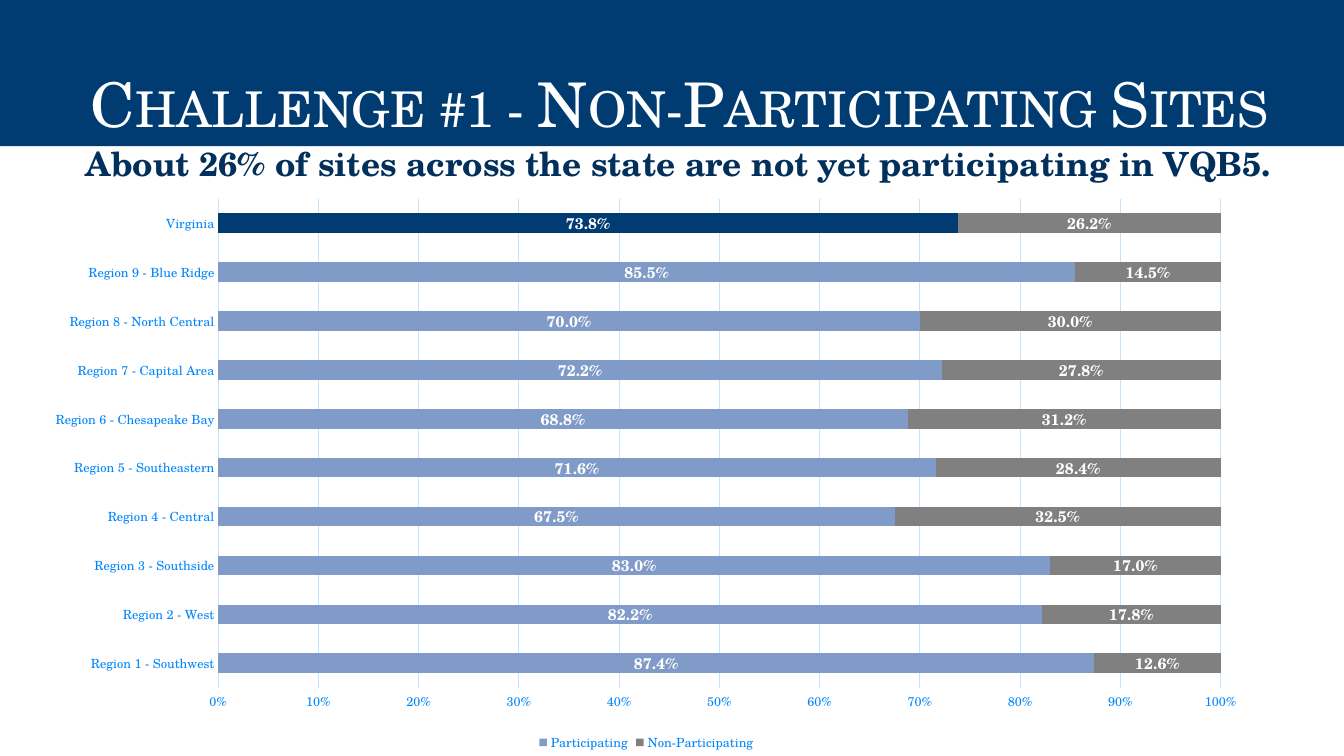
from pptx import Presentation
from pptx.chart.data import CategoryChartData
from pptx.dml.color import RGBColor
from pptx.enum.chart import XL_CHART_TYPE, XL_LABEL_POSITION, XL_LEGEND_POSITION, XL_TICK_MARK
from pptx.enum.shapes import MSO_SHAPE
from pptx.enum.text import MSO_ANCHOR, PP_ALIGN
from pptx.oxml import parse_xml
from pptx.oxml.ns import nsdecls, qn
from pptx.util import Emu, Pt

PX = 9144  # 100 px to the inch
FONT = "TeX Gyre Schola"
WHITE = RGBColor(0xFF, 0xFF, 0xFF)
NAVY = RGBColor(0x00, 0x3C, 0x71)
DARK_NAVY = RGBColor(0x00, 0x30, 0x5B)
BRIGHT_BLUE = RGBColor(0x00, 0x86, 0xFC)
PALE_BLUE = RGBColor(0xC3, 0xE3, 0xFF)
SOFT_BLUE = RGBColor(0x81, 0x9B, 0xC9)
GRAY = RGBColor(0x80, 0x80, 0x80)

PARTICIPATION = {
    "Region 1 - Southwest": (0.874, 0.126),
    "Region 2 - West": (0.822, 0.178),
    "Region 3 - Southside": (0.83, 0.17),
    "Region 4 - Central": (0.675, 0.325),
    "Region 5 - Southeastern": (0.716, 0.284),
    "Region 6 - Chesapeake Bay": (0.688, 0.312),
    "Region 7 - Capital Area": (0.722, 0.278),
    "Region 8 - North Central": (0.7, 0.3),
    "Region 9 - Blue Ridge": (0.855, 0.145),
    "Virginia": (0.738, 0.262),
}
SERIES_COLORS = {"Participating": SOFT_BLUE, "Non-Participating": GRAY}


def px(*lengths):
    return [Emu(length * PX) for length in lengths]


def style_font(font, size, color, bold=False):
    font.name = FONT
    font.size = Pt(size)
    font.bold = bold
    font.color.rgb = color


def write_line(shape, text, size, color, left_inset, line_spacing, bold=False):
    """Put one left-aligned line of text in a shape and return its run."""
    frame = shape.text_frame
    frame.word_wrap = True
    frame.margin_left, frame.margin_right = px(left_inset, 10)
    frame.margin_top, frame.margin_bottom = px(5, 5)
    paragraph = frame.paragraphs[0]
    paragraph.alignment = PP_ALIGN.LEFT
    paragraph.line_spacing = line_spacing
    run = paragraph.add_run()
    run.text = text
    style_font(run.font, size, color, bold)
    return run


def add_title_band(slide, text):
    band = slide.shapes.add_shape(MSO_SHAPE.RECTANGLE, *px(0, 0, 1333, 145))
    band.shadow.inherit = False
    band.fill.solid()
    band.fill.fore_color.rgb = NAVY
    band.line.fill.background()
    band.text_frame.vertical_anchor = MSO_ANCHOR.BOTTOM
    run = write_line(band, text, 44, WHITE, left_inset=90, line_spacing=0.9)
    run.font._element.set("cap", "small")


def add_subtitle(slide, text):
    box = slide.shapes.add_textbox(*px(55, 145, 1260, 65))
    write_line(box, text, 23.8, DARK_NAVY, left_inset=30, line_spacing=0.8, bold=True)


def place_plot(chart, left, top, width, height):
    """Fix the inner plot area, in fractions of the chart."""
    plot_area = chart.element.find(".//" + qn("c:plotArea"))
    for layout in plot_area.findall(qn("c:layout")):
        plot_area.remove(layout)
    plot_area.insert(0, parse_xml(
        f'<c:layout {nsdecls("c")}><c:manualLayout><c:layoutTarget val="inner"/>'
        '<c:xMode val="edge"/><c:yMode val="edge"/>'
        f'<c:x val="{left}"/><c:y val="{top}"/><c:w val="{width}"/><c:h val="{height}"/>'
        '</c:manualLayout></c:layout>'))


def style_axes(chart):
    category_axis, value_axis = chart.category_axis, chart.value_axis
    for axis in (category_axis, value_axis):
        axis.major_tick_mark = axis.minor_tick_mark = XL_TICK_MARK.NONE
        style_font(axis.tick_labels.font, 9, BRIGHT_BLUE)
    category_axis.has_major_gridlines = False
    value_axis.has_major_gridlines = True
    for line in (category_axis.format.line, value_axis.major_gridlines.format.line):
        line.color.rgb = PALE_BLUE
        line.width = Pt(0.75)
    value_axis.format.line.fill.background()
    value_axis.minimum_scale, value_axis.maximum_scale = 0, 1
    value_axis.major_unit = 0.1
    value_axis.tick_labels.number_format = "0%"
    value_axis.tick_labels.number_format_is_linked = False


def style_series(series, color):
    series.format.fill.solid()
    series.format.fill.fore_color.rgb = color
    labels = series.data_labels
    labels.show_value = True
    labels.position = XL_LABEL_POSITION.CENTER
    labels.number_format = "0.0%"
    labels.number_format_is_linked = False
    style_font(labels.font, 11, WHITE, bold=True)


def add_participation_chart(slide):
    data = CategoryChartData(number_format="0.0%")
    data.categories = list(PARTICIPATION)
    for name, values in zip(SERIES_COLORS, zip(*PARTICIPATION.values())):
        data.add_series(name, values)
    frame = slide.shapes.add_chart(
        XL_CHART_TYPE.BAR_STACKED_100, *px(31, 186, 1220, 564), data)
    chart = frame.chart
    chart.has_title = False
    style_font(chart.font, 10, NAVY)
    place_plot(chart, 0.152, 0.02, 0.815, 0.86)
    style_axes(chart)

    plot = chart.plots[0]
    plot.gap_width = 150
    plot.overlap = 100
    plot.vary_by_categories = False
    for series in plot.series:
        style_series(series, SERIES_COLORS[series.name])
    state_bar = plot.series[0].points[len(PARTICIPATION) - 1]
    state_bar.format.fill.solid()
    state_bar.format.fill.fore_color.rgb = NAVY

    chart.has_legend = True
    chart.legend.position = XL_LEGEND_POSITION.BOTTOM
    chart.legend.include_in_layout = False
    style_font(chart.legend.font, 9, BRIGHT_BLUE)


def main():
    presentation = Presentation()
    presentation.slide_width, presentation.slide_height = px(1333, 750)
    slide = presentation.slides.add_slide(presentation.slide_layouts[6])
    add_title_band(slide, "Challenge #1 - Non-Participating Sites")
    add_subtitle(
        slide, "About 26% of sites across the state are not yet participating in VQB5.")
    add_participation_chart(slide)
    presentation.save("out.pptx")


if __name__ == "__main__":
    main()
